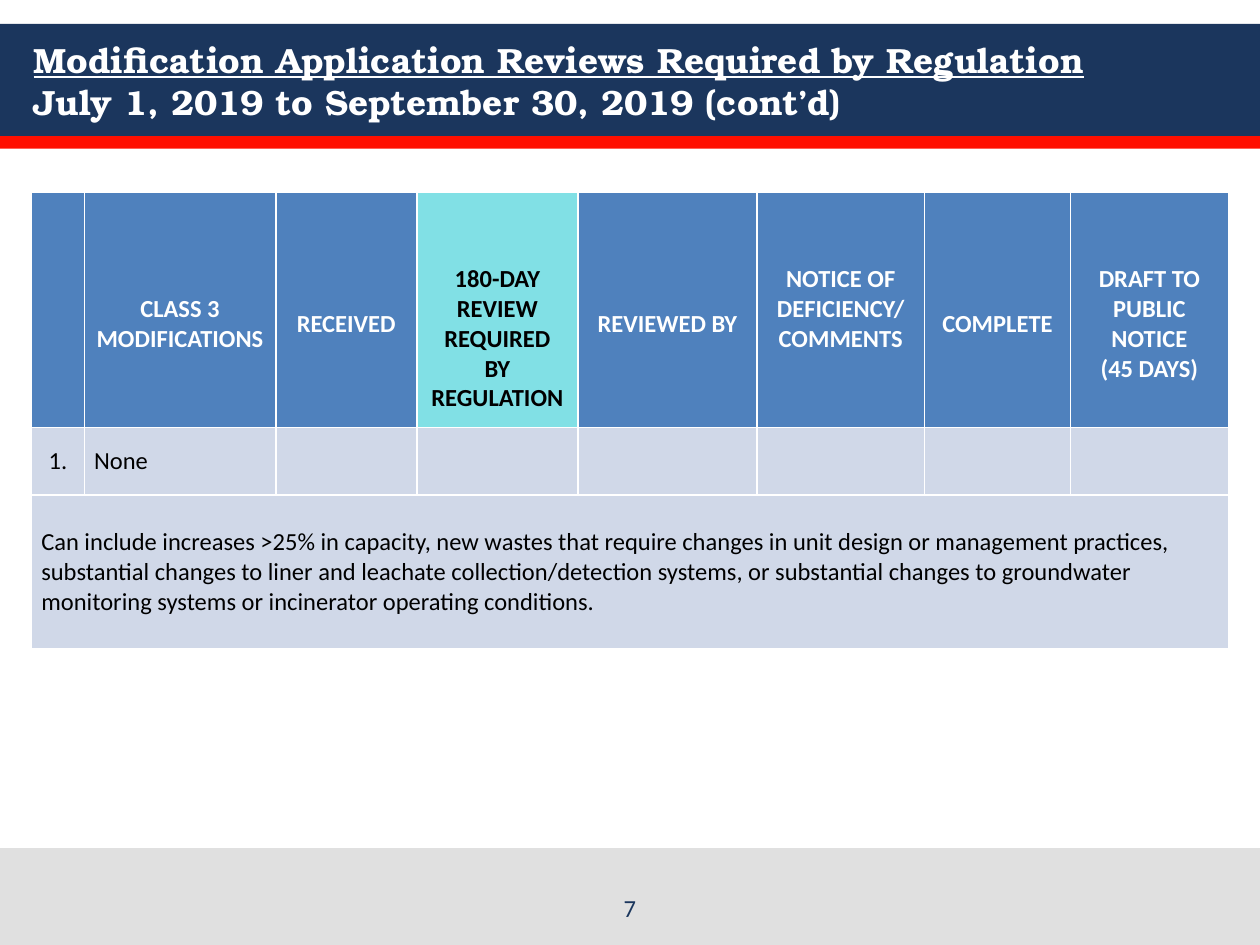
from lxml import etree
from pptx import Presentation
from pptx import util as u
from pptx.dml.color import RGBColor
from pptx.enum import shapes, text
from pptx.oxml.ns import qn

COLORS = {
    "navy": "1B365D", "red": "FF0F00", "grey": "E0E0E0", "white": "FFFFFF",
    "black": "000000", "blue": "4F81BD", "aqua": "81E0E5", "pale": "D0D8E8",
}
SLIDE_WIDTH, SLIDE_HEIGHT = 720, 540
COLUMN_WIDTHS = [30.2, 109.4, 80.6, 92.2, 102.2, 95.8, 83.4, 90.2]
ROW_HEIGHTS = [135.4, 38.6, 88]
LINE_HEIGHT = 17  # one line of 14 pt text

# Header text and the number of lines it is pushed down by
HEADERS = [
    ("", 0),
    ("CLASS 3 MODIFICATIONS", 1),
    ("RECEIVED", 1),
    ("180-DAY\nREVIEW REQUIRED\nBY REGULATION", 2),
    ("REVIEWED BY", 1),
    ("NOTICE OF DEFICIENCY/ COMMENTS", 0),
    ("COMPLETE", 1),
    ("DRAFT TO PUBLIC NOTICE\v(45 DAYS)", 1),
]
REVIEW_COLUMN = 3
FIRST_ROW = ["1.", "None"]
NOTE = (
    "Can include increases >25% in capacity, new wastes that require changes in "
    "unit design or management practices,\n"
    "substantial changes to liner and leachate collection/detection systems, or "
    "substantial changes to groundwater monitoring systems or incinerator "
    "operating conditions."
)


def color(name):
    return RGBColor.from_string(COLORS[name])


def set_values(target, values):
    for name, value in values.items():
        setattr(target, name, value)


def format_font(font, color_name, **values):
    set_values(font, {"name": "Calibri", "size": u.Pt(14), **values})
    font.color.rgb = color(color_name)


def add_band(slide, top, height, fill):
    shape = slide.shapes.add_shape(
        shapes.MSO_SHAPE.RECTANGLE, 0, u.Pt(top), u.Pt(SLIDE_WIDTH), u.Pt(height))
    shape.shadow.inherit = False
    shape.fill.solid()
    shape.fill.fore_color.rgb = color(fill)
    shape.line.fill.background()


def add_title(slide, heading, period):
    title = slide.shapes.title
    set_values(title, {"left": u.Pt(12), "top": u.Pt(13.5),
                       "width": u.Pt(696), "height": u.Pt(65)})
    title.text_frame.vertical_anchor = text.MSO_ANCHOR.MIDDLE
    paragraph = title.text_frame.paragraphs[0]
    paragraph.alignment = text.PP_ALIGN.LEFT
    for line, underline in ((heading, True), (period, False)):
        if paragraph.runs:
            paragraph.add_line_break()
        run = paragraph.add_run()
        run.text = line
        format_font(run.font, "white", name="TeX Gyre Bonum", size=u.Pt(20),
                    bold=True, underline=underline)


def add_borders(cell, widths):
    properties = cell._tc.get_or_add_tcPr()
    for side, width in widths.items():
        line = etree.SubElement(properties, qn(f"a:ln{side}"), w=str(u.Pt(width)))
        fill = etree.SubElement(line, qn("a:solidFill"))
        etree.SubElement(fill, qn("a:srgbClr"), val=COLORS["white"])


def fill_cell(cell, words, fill, font_color="black", bold=False,
              centered=False, lines_down=0, top_border=1):
    add_borders(cell, {"L": 1, "R": 1, "T": top_border, "B": 1})
    cell.fill.solid()
    cell.fill.fore_color.rgb = color(fill)
    set_values(cell, {
        "margin_left": u.Pt(5.6), "margin_right": u.Pt(5.6),
        "margin_top": u.Pt(lines_down * LINE_HEIGHT), "margin_bottom": 0,
        "vertical_anchor": text.MSO_ANCHOR.MIDDLE, "text": words,
    })
    for paragraph in cell.text_frame.paragraphs:
        paragraph.alignment = text.PP_ALIGN.CENTER if centered else text.PP_ALIGN.LEFT
        for run in paragraph.runs:
            format_font(run.font, font_color, bold=bold)


def add_review_table(slide):
    table = slide.shapes.add_table(
        len(ROW_HEIGHTS), len(COLUMN_WIDTHS), u.Pt(18), u.Pt(109),
        u.Pt(sum(COLUMN_WIDTHS)), u.Pt(sum(ROW_HEIGHTS))).table
    for column, width in zip(table.columns, COLUMN_WIDTHS):
        column.width = u.Pt(width)
    for row, height in zip(table.rows, ROW_HEIGHTS):
        row.height = u.Pt(height)

    # Header row, with the review deadline highlighted
    for index, (words, lines_down) in enumerate(HEADERS):
        highlighted = index == REVIEW_COLUMN
        fill_cell(table.cell(0, index), words, "aqua" if highlighted else "blue",
                  "black" if highlighted else "white", bold=True, centered=True,
                  lines_down=lines_down, top_border=3)

    # Modification row and the note that spans the table
    for index in range(len(COLUMN_WIDTHS)):
        words = FIRST_ROW[index] if index < len(FIRST_ROW) else ""
        fill_cell(table.cell(1, index), words, "pale", centered=index == 0)
    note_cell = table.cell(2, 0)
    note_cell.merge(table.cell(2, len(COLUMN_WIDTHS) - 1))
    fill_cell(note_cell, NOTE, "pale")


def add_page_number(slide, number):
    box = slide.shapes.add_textbox(u.Pt(246), u.Pt(502), u.Pt(228), u.Pt(28.8))
    set_values(box.text_frame, {"word_wrap": True, "text": number,
                                "vertical_anchor": text.MSO_ANCHOR.BOTTOM})
    paragraph = box.text_frame.paragraphs[0]
    paragraph.alignment = text.PP_ALIGN.CENTER
    format_font(paragraph.runs[0].font, "navy")


def main():
    presentation = Presentation()
    set_values(presentation, {"slide_width": u.Pt(SLIDE_WIDTH),
                              "slide_height": u.Pt(SLIDE_HEIGHT)})
    slide = presentation.slides.add_slide(presentation.slide_layouts[5])

    # Header and footer bands, kept behind the title
    add_band(slide, 13.7, 64.1, "navy")
    add_band(slide, 77.8, 7.2, "red")
    add_band(slide, 484.6, SLIDE_HEIGHT - 484.6, "grey")
    title_element = slide.shapes.title._element
    slide.shapes._spTree.append(title_element)

    # Content
    add_title(slide, "Modification Application Reviews Required by Regulation",
              "July 1, 2019 to September 30, 2019 (cont’d)")
    add_review_table(slide)
    add_page_number(slide, "7")
    presentation.save("out.pptx")


if __name__ == "__main__":
    main()
